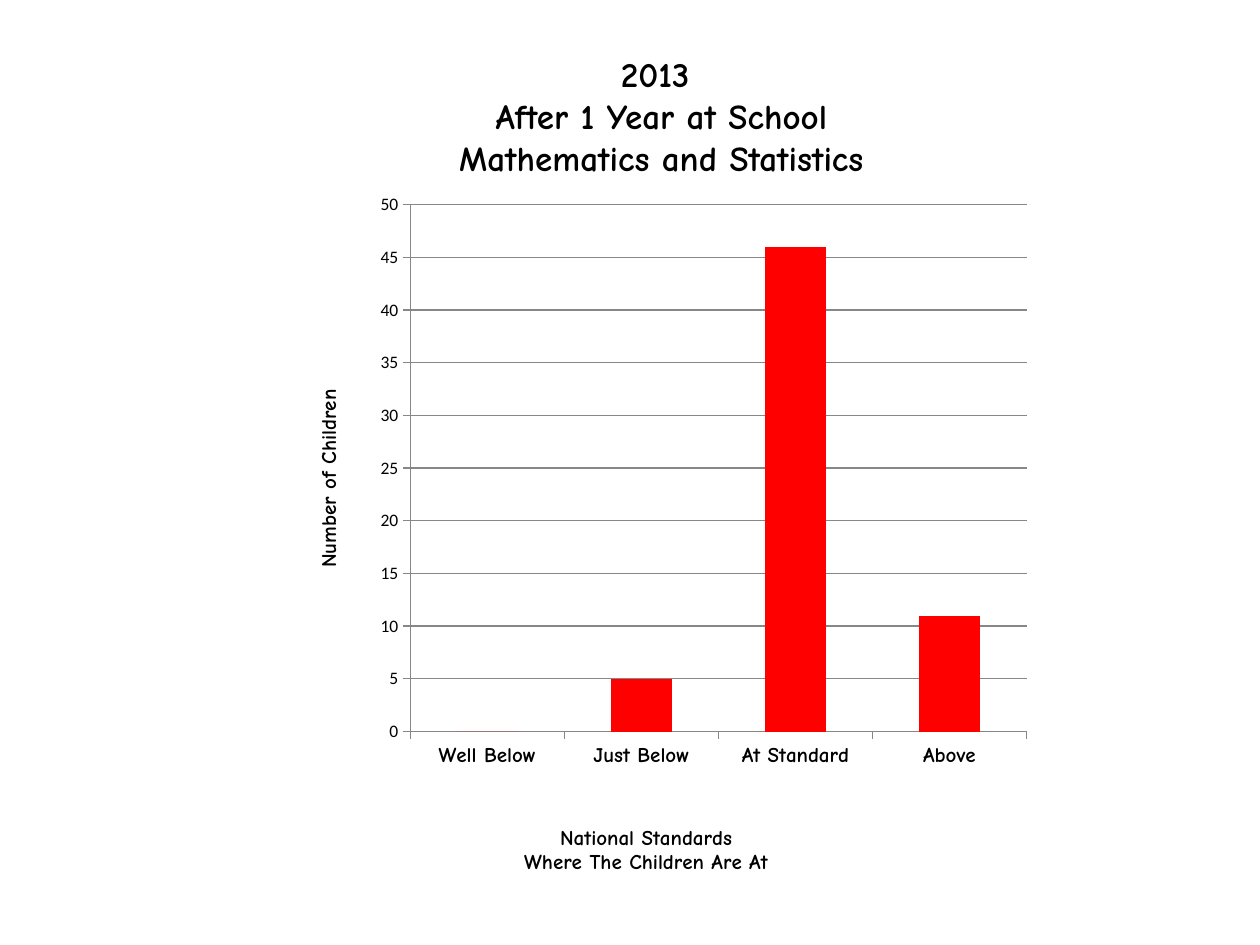
from lxml import etree
from pptx import Presentation
from pptx.chart.data import CategoryChartData
from pptx.dml.color import RGBColor
from pptx.enum import chart as ch, text
from pptx.oxml.ns import qn
from pptx.util import Pt

BLACK = RGBColor(0, 0, 0)
RED = RGBColor(0xFF, 0, 0)
GRAY = RGBColor(0x87, 0x87, 0x87)
HAND = "Comic Neue"


def write(tf, content, size=12, font=HAND, bold=True, align=text.PP_ALIGN.CENTER):
    for i, line in enumerate(content.split("\n")):
        p = tf.paragraphs[0] if i == 0 else tf.add_paragraph()
        p.alignment = align
        r = p.add_run()
        r.text = line
        r.font.size, r.font.name, r.font.bold = Pt(size), font, bold
        r.font.color.rgb = BLACK


def place(parent, index, **values):
    """Give a chart part a manual layout, as fractions of the chart."""
    for old in parent.findall(qn("c:layout")):
        parent.remove(old)
    layout = etree.Element(qn("c:layout"))
    manual = etree.SubElement(layout, qn("c:manualLayout"))
    for tag, val in values.items():
        etree.SubElement(manual, qn("c:" + tag)).set("val", str(val))
    parent.insert(index, layout)


prs = Presentation()
prs.slide_width, prs.slide_height = Pt(720), Pt(540)
s = prs.slides.add_slide(prs.slide_layouts[5])

# Title
sp = s.shapes.title
sp.left, sp.top, sp.width, sp.height = Pt(54), Pt(21), Pt(648), Pt(90)
tf = sp.text_frame
tf.vertical_anchor = text.MSO_ANCHOR.MIDDLE
write(tf, "2013 \nAfter 1 Year at School\nMathematics and Statistics", size=20)
for p in tf.paragraphs:
    p.space_before = Pt(0)

# Column chart
data = CategoryChartData()
data.categories = ["Well Below", "Just Below", "At Standard", "Above"]
data.add_series("Series 1", (0, 5, 46, 11))
chart = s.shapes.add_chart(ch.XL_CHART_TYPE.COLUMN_CLUSTERED, Pt(127.5), Pt(106),
                           Pt(459.5), Pt(408), data).chart
chart.has_legend = False
chart.has_title = False
chart.font.size, chart.font.name = Pt(10), "Calibri"
chart.font.color.rgb = BLACK
place(chart.plots[0]._element.getparent(), 0, layoutTarget="inner", xMode="edge",
      yMode="edge", x=0.233, y=0.027, w=0.767, h=0.738)

plot = chart.plots[0]
plot.gap_width = 150
plot.vary_by_categories = False
fill = plot.series[0].format.fill
fill.solid()
fill.fore_color.rgb = RED

# Axes and their titles
cat, val = chart.category_axis, chart.value_axis
for axis, title, x, y in (
    (cat, "National Standards\nWhere The Children Are At", 0.37, 0.89),
    (val, "Number of Children", 0.11, 0.28),
):
    axis.major_tick_mark = ch.XL_TICK_MARK.OUTSIDE
    axis.minor_tick_mark = ch.XL_TICK_MARK.NONE
    axis.format.line.color.rgb = GRAY
    write(axis.axis_title.text_frame, title)
    place(axis.axis_title._element, 1, xMode="edge", yMode="edge", x=x, y=y)
val.axis_title.text_frame._txBody.bodyPr.set("rot", "-5400000")
val.axis_title.text_frame._txBody.bodyPr.set("vert", "horz")

font = cat.tick_labels.font
font.size, font.name, font.bold = Pt(12), HAND, True
val.minimum_scale, val.maximum_scale, val.major_unit = 0, 50, 5
val.has_major_gridlines = True
val.major_gridlines.format.line.color.rgb = GRAY

prs.save("out.pptx")
